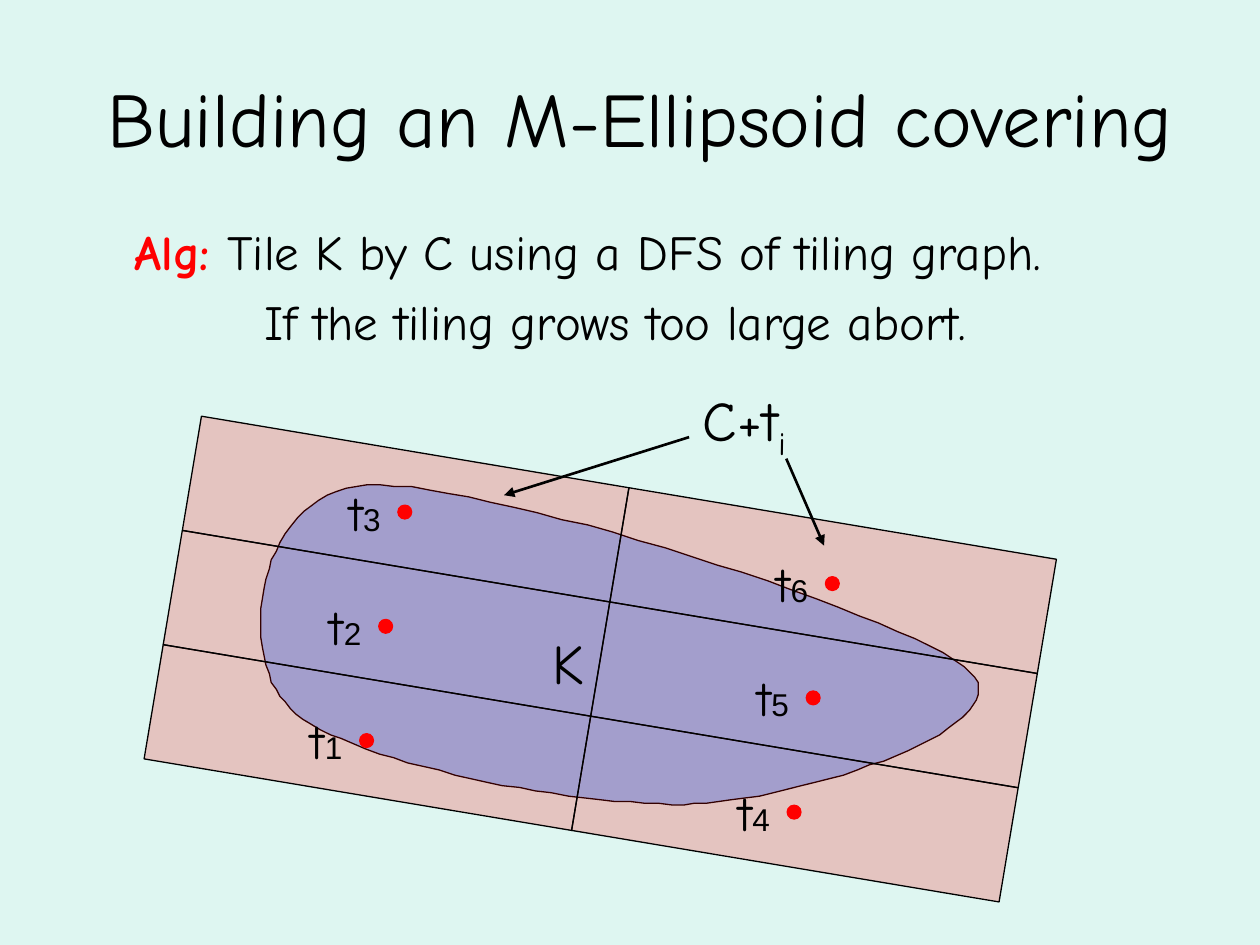
import math

from lxml import etree
from pptx import Presentation
from pptx import util as u
from pptx.dml.color import RGBColor
from pptx.enum import shapes, text
from pptx.oxml import ns

Pt = u.Pt
COLORS = {"background": "DEF6F1", "body": "8DC6FF", "red": "FF0000", "black": "000000"}
RGB = {name: RGBColor.from_string(value) for name, value in COLORS.items()}
FONT = "Comic Neue"


def add_text(left, top, width, height, paragraphs, wrap=False):
    """Each paragraph is a list of (wording, size, font, colour)."""
    box = slide.shapes.add_textbox(Pt(left), Pt(top), Pt(width), Pt(height))
    frame = box.text_frame
    frame.word_wrap = wrap
    for number, pieces in enumerate(paragraphs):
        paragraph = frame.add_paragraph() if number else frame.paragraphs[0]
        for wording, size, font, color in pieces:
            run = paragraph.add_run()
            run.text = wording
            run.font.size = Pt(size)
            run.font.name = font
            run.font.color.rgb = RGB[color]
    return frame


def style(shape, fill, line):
    shape.shadow.inherit = False
    shape.fill.solid()
    shape.fill.fore_color.rgb = RGB[fill]
    shape.line.color.rgb = RGB[line]
    shape.line.width = Pt(0.75)


presentation = Presentation()
presentation.slide_width, presentation.slide_height = Pt(720), Pt(540)
slide = presentation.slides.add_slide(presentation.slide_layouts[6])
slide.background.fill.solid()
slide.background.fill.fore_color.rgb = RGB["background"]

# Title
title = add_text(36, 21.6, 660.2, 90,
                 [[("Building an M-Ellipsoid covering", 44, FONT, "black")]], wrap=True)
title.vertical_anchor = text.MSO_ANCHOR.MIDDLE
title.paragraphs[0].alignment = text.PP_ALIGN.CENTER

# Algorithm, the second line indented
algorithm = add_text(69.8, 123.1, 619.2, 86.4, [
    [("Alg: ", 28, FONT, "red"),
     ("Tile K by C using a DFS of tiling graph.", 28, FONT, "black")],
    [("If the tiling grows too large abort.", 28, FONT, "black")],
], wrap=True)
algorithm.paragraphs[0].runs[0].font.bold = True
for paragraph, margin, indent in zip(algorithm.paragraphs, (27, 74), (-27, 0)):
    paragraph.space_before = Pt(6.5)
    properties = paragraph._p.get_or_add_pPr()
    properties.set("marL", str(Pt(margin)))
    properties.set("indent", str(Pt(indent)))

# Convex body K, traced along four cubic curves
start = (210.2, 277.2)
curves = [
    ((145.4, 280.8), (134.6, 374.4), (165.6, 404.6)),
    ((196.6, 435.6), (332.6, 462.2), (397.4, 459.4)),
    ((462.2, 455.8), (585.4, 414.7), (554.4, 383.8)),
    ((523.4, 353.5), (275, 273.6), start),
]
STEPS = 30
outline = []
point = start
for first, second, end in curves:
    for step in range(1, STEPS + 1):
        t = step / STEPS
        s = 1 - t
        outline.append(tuple(
            s**3 * a + 3 * s * s * t * b + 3 * s * t * t * c + t**3 * d
            for a, b, c, d in zip(point, first, second, end)))
    point = end
builder = slide.shapes.build_freeform(*start, scale=Pt(1))
builder.add_line_segments(outline, close=True)
style(builder.convert_to_shape(), "body", "black")

# Centres of the tilted grid of tiles
TILE_W, TILE_H, TILT = 247.7, 66.2, 9.5
cosine, sine = math.cos(math.radians(TILT)), math.sin(math.radians(TILT))
centres = {}
for column in range(2):
    for row in range(3):
        centres[3 * column + 3 - row] = (
            231.8 + column * TILE_W * cosine - row * TILE_H * sine,
            290.9 + column * TILE_W * sine + row * TILE_H * cosine)

# Translucent tiles
for x, y in centres.values():
    tile = slide.shapes.add_shape(
        shapes.MSO_SHAPE.RECTANGLE, Pt(x - TILE_W / 2), Pt(y - TILE_H / 2),
        Pt(TILE_W), Pt(TILE_H))
    tile.rotation = TILT
    style(tile, "red", "black")
    color = tile.fill._xPr.find(ns.qn("a:solidFill"))[0]
    etree.SubElement(color, ns.qn("a:alpha"), val="20000")

# Tile centre dots and their labels
DOT = 7.9
for number, (x, y) in centres.items():
    dot = slide.shapes.add_shape(
        shapes.MSO_SHAPE.OVAL, Pt(x - 0.5 - DOT / 2), Pt(y + 1.7 - DOT / 2), Pt(DOT), Pt(DOT))
    style(dot, "red", "red")
    add_text(x - 39.4, y - 18.9, 37.4, 41,
             [[("t", 28, FONT, "black"), (str(number), 18, "Arial", "black")]])

# Labels of the body and the tiles
add_text(308.9, 355.7, 33.8, 45.4, [[("K", 32, FONT, "black")]])
tile_label = add_text(394.6, 216.7, 69.8, 45.4,
                      [[("C+t", 32, FONT, "black"), ("i", 32, FONT, "black")]])
tile_label.paragraphs[0].runs[1].font._element.set("baseline", "-25000")

# Arrows from the tile label
for x1, y1, x2, y2 in [(393.8, 249.8, 288, 283), (449.3, 262.1, 470.9, 311.8)]:
    arrow = slide.shapes.add_connector(
        shapes.MSO_CONNECTOR.STRAIGHT, Pt(x1), Pt(y1), Pt(x2), Pt(y2))
    arrow.line.color.rgb = RGB["black"]
    arrow.line.width = Pt(1.5)
    etree.SubElement(arrow.line._get_or_add_ln(), ns.qn("a:tailEnd"), type="triangle")
    etree.SubElement(arrow._element.spPr, ns.qn("a:effectLst"))

presentation.save("out.pptx")
